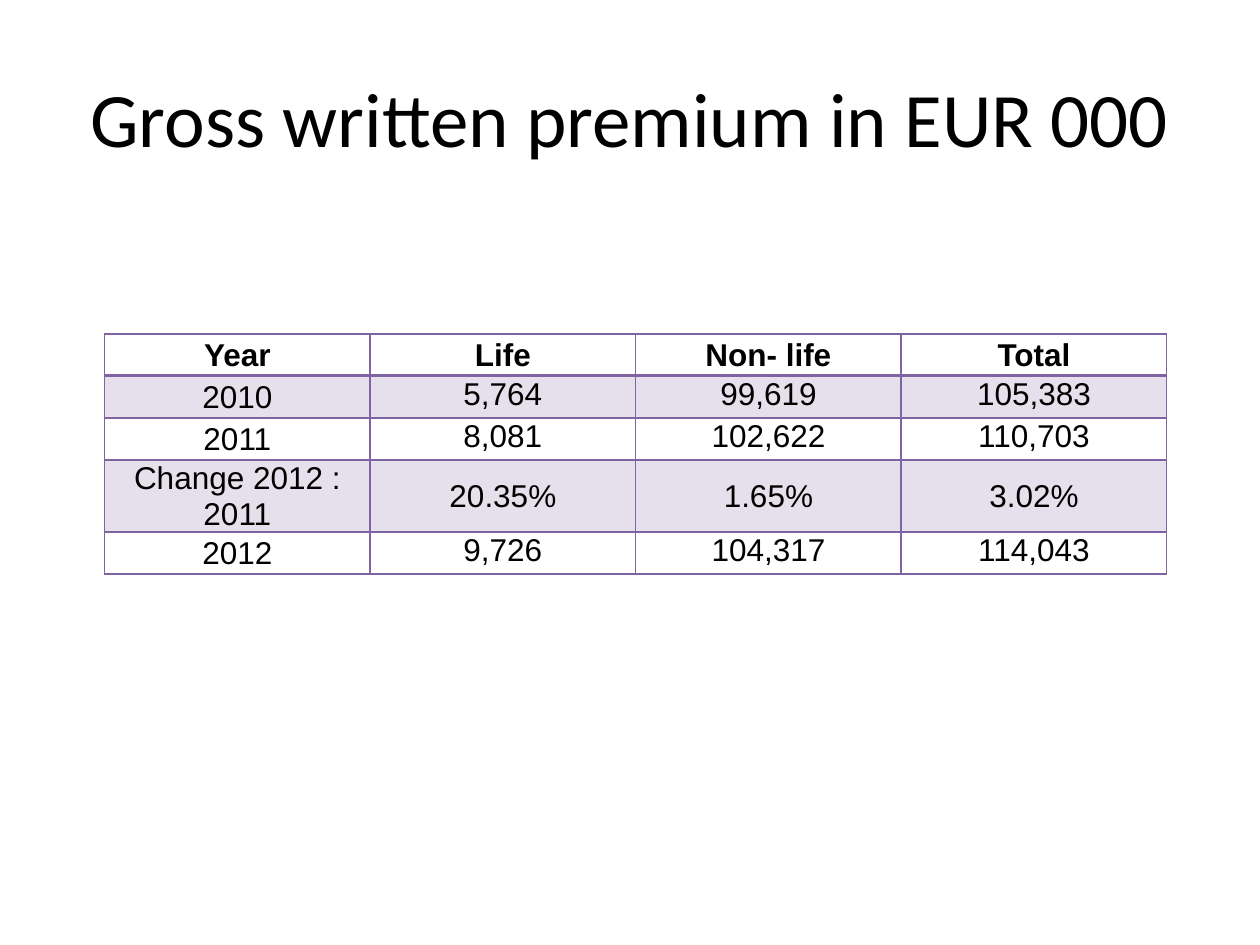
"""Build a slide with a table of gross written premium by year."""
import pptx
import pptx.dml.color
import pptx.enum.text
import pptx.util
from lxml import etree
from pptx.oxml.ns import qn

Inches = pptx.util.Inches
Pt = pptx.util.Pt
MIDDLE = pptx.enum.text.MSO_ANCHOR.MIDDLE
TOP = pptx.enum.text.MSO_ANCHOR.TOP
CENTER = pptx.enum.text.PP_ALIGN.CENTER
PURPLE = "8064A2"
ROWS = [
    ["Year", "Life", "Non- life", "Total"],
    ["2010", "5,764", "99,619", "105,383"],
    ["2011", "8,081", "102,622", "110,703"],
    ["Change 2012 : 2011", "20.35%", "1.65%", "3.02%"],
    ["2012", "9,726", "104,317", "114,043"],
]


def rgb(color):
    return pptx.dml.color.RGBColor.from_string(color)


def add_border(cell, side, width):
    ln = etree.SubElement(cell._tc.get_or_add_tcPr(), qn(f"a:ln{side}"), w=str(Pt(width)))
    fill = etree.SubElement(ln, qn("a:solidFill"))
    etree.SubElement(fill, qn("a:srgbClr"), val=PURPLE)


prs = pptx.Presentation()
prs.slide_width = Inches(10)
prs.slide_height = Inches(7.5)
s = prs.slides.add_slide(prs.slide_layouts[5])

title = s.shapes.title
title.left, title.top = Inches(0.5), Inches(0.3)
title.width, title.height = Inches(9), Inches(1.25)
tf = title.text_frame
tf.text = "Gross written premium in EUR 000"
tf.vertical_anchor = MIDDLE
p = tf.paragraphs[0]
p.alignment = CENTER
p.font.name = "Calibri"
p.font.size = Pt(44)
p.font.color.rgb = rgb("000000")

table = s.shapes.add_table(
    len(ROWS), len(ROWS[0]), Inches(0.83), Inches(2.65), Inches(8.43), Inches(1.67)
).table
table.horz_banding = False

for i, row in enumerate(ROWS):
    for j, text in enumerate(row):
        cell = table.cell(i, j)
        cell.text = text
        cell.margin_left = cell.margin_right = cell.margin_top = Inches(0.01)
        cell.margin_bottom = 0
        is_figure = j > 0 and i > 0 and not text.endswith("%")
        cell.vertical_anchor = TOP if is_figure else MIDDLE
        p = cell.text_frame.paragraphs[0]
        p.alignment = CENTER
        p.font.name = "Arial"
        p.font.size = Pt(18)
        p.font.bold = i == 0
        p.font.color.rgb = rgb("000000")
        for side in "LRTB":
            under_header = (i, side) in [(0, "B"), (1, "T")]
            add_border(cell, side, 2 if under_header else 1)
        if i % 2:
            cell.fill.solid()
            cell.fill.fore_color.rgb = rgb(PURPLE)
            color = cell._tc.tcPr.find(f"{qn('a:solidFill')}/{qn('a:srgbClr')}")
            etree.SubElement(color, qn("a:alpha"), val="20000")
        else:
            cell.fill.background()

prs.save("out.pptx")
